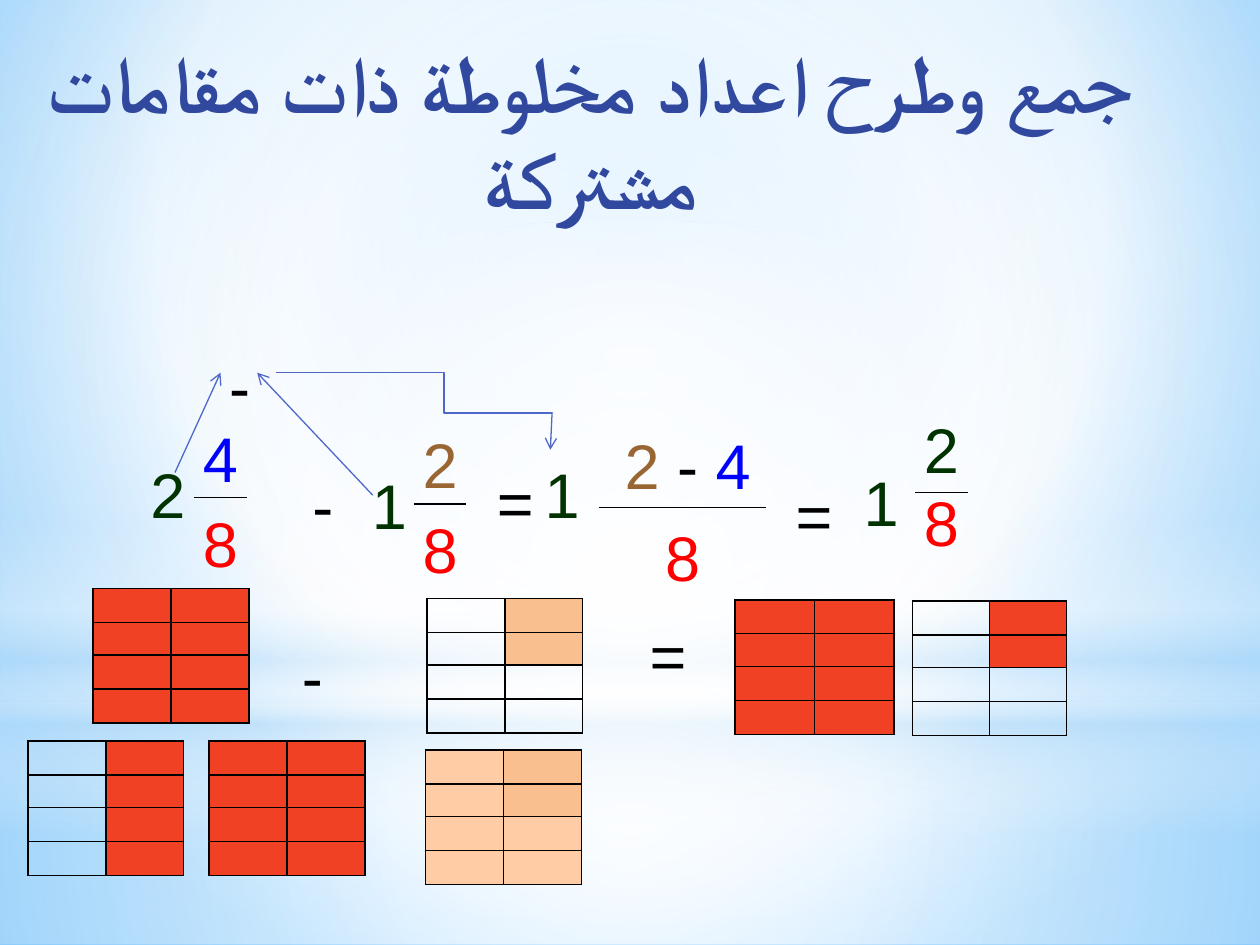
from dataclasses import dataclass
from lxml.etree import SubElement
from pptx import Presentation
from pptx.dml.color import RGBColor
from pptx.enum.shapes import MSO_CONNECTOR as Connector, MSO_SHAPE as Shape
from pptx.enum.text import MSO_ANCHOR as Anchor, MSO_AUTO_SIZE as AutoSize, PP_ALIGN as Align
from pptx.oxml import parse_xml
from pptx.oxml.ns import nsdecls, qn
from pptx.util import Pt


@dataclass(frozen=True)
class Theme:
    title_font: str = "Karla"
    font: str = "Arial"
    title_size: float = 46
    number_size: float = 36
    cell_size: float = 8
    title: str = "31489F"
    black: str = "000000"
    whole: str = "003300"
    first: str = "0000FF"
    second: str = "996633"
    bottom: str = "FF0000"
    arrow: str = "4E67C8"
    red: str = "F14124"
    orange: str = "FABF8F"
    peach: str = "FFCCA6"


THEME = Theme()
TITLE = "جمع وطرح اعداد مخلوطة ذات مقامات مشتركة"

# Gradients: stops (position, colour, opacity), then centre insets or None for vertical
BACKGROUND = ([(0, "9ED5FF", 100), (60, "FFFFFF", 100), (100, "5BB9FF", 100)], (20, 10, 20, 60))
CENTRE = (50, 50, 50, 50)
# Backdrop: shape, top, height, stops, centre
BACKDROP = [
    (Shape.RECTANGLE, 402, 138, [(0, "FFFFFF", 91), (37, "FFFFFF", 76), (100, "B4DCFA", 79)], CENTRE),
    (Shape.RECTANGLE, 0, 402, [(0, "FFFFFF", 89), (48, "FFFFFF", 62), (100, "B4DCFA", 79)], CENTRE),
    (Shape.RECTANGLE, 296.5, 180, [(0, "FFFFFF", 0), (29, "FFFFFF", 30), (45, "B4DCFA", 40),
                                   (55, "FFFFFF", 26), (65, "B4DCFA", 60), (100, "FFFFFF", 0)], None),
    (Shape.OVAL, 126, 402, [(0, "FFFFFF", 100), (56, "FFFFFF", 0)], CENTRE),
]

# Fractions: left, numerator top, bar y, denominator top, numerator, colour, denominator
FRACTIONS = [
    (105, 236, 284.5, 284.5, "4", THEME.first, "8"),
    (230.5, 239.75, 288, 288, "2", THEME.second, "8"),
    (517, 231, 281.5, 273, "2", THEME.whole, "8"),
]
DIFFERENCE = [("2 ", THEME.second), ("- ", THEME.black), ("4", THEME.first)]

# Whole numbers and signs: text, left, top
WHOLES = [("2", 75, 257), ("1", 201.5, 263), ("1", 300.25, 257), ("1", 482.5, 261.5)]
SIGNS = [("-", 163.5, 263), ("=", 273.5, 261.5), ("=", 444.25, 268.5),
         ("-", 157.5, 360.75), ("=", 360.75, 349), ("-", 116, 195)]

# Straight arrows: start, end
ARROWS = [((100, 270), (126, 213)), ((213, 283), (147, 213)), ((315.5, 235.5), (314.5, 257))]

# Fraction models: left, top, column width, rows of cell colours
ROW_HEIGHTS = [19.4, 18.7, 19.4, 19.4]
FULL = [(THEME.red, THEME.red)] * 4
EMPTY = (None, None)
MODELS = [
    (16, 423.5, 44.5, [(None, THEME.red)] * 4),
    (244, 342, 44.5, [(None, THEME.orange)] * 2 + [EMPTY] * 2),
    (521.5, 343.5, 44, [(None, THEME.red)] * 2 + [EMPTY] * 2),
    (53.25, 336.25, 44.5, FULL),
    (243.25, 428.5, 44.5, [(THEME.peach, THEME.orange)] * 2 + [(THEME.peach, THEME.peach)] * 2),
    (420, 342.75, 45.4, FULL),
    (119.5, 423.5, 44.5, FULL),
]


def set_gradient(fill, properties, stops, centre):
    fill.gradient()
    stop_xml = "".join(
        f'<a:gs pos="{position * 1000}"><a:srgbClr val="{color}">'
        f'<a:alpha val="{opacity * 1000}"/></a:srgbClr></a:gs>'
        for position, color, opacity in stops)
    direction = '<a:lin ang="5400000" scaled="0"/>'
    if centre:
        sides = " ".join(f'{side}="{inset * 1000}"' for side, inset in zip("ltrb", centre))
        direction = f'<a:path path="circle"><a:fillToRect {sides}/></a:path>'
    gradient = parse_xml(f'<a:gradFill {nsdecls("a")} rotWithShape="1">'
                         f'<a:gsLst>{stop_xml}</a:gsLst>{direction}</a:gradFill>')
    properties.replace(properties.find(qn("a:gradFill")), gradient)


def format_run(run, font, size, color):
    run.font.name = font
    run.font.size = Pt(size)
    run.font.color.rgb = RGBColor.from_string(color)


def add_text(slide, runs, left, top, width=42):
    shape = slide.shapes.add_textbox(Pt(left), Pt(top), Pt(width), Pt(50.5))
    frame = shape.text_frame
    frame.word_wrap = True
    frame.auto_size = AutoSize.SHAPE_TO_FIT_TEXT
    paragraph = frame.paragraphs[0]
    paragraph.alignment = Align.CENTER
    spacing = SubElement(paragraph._p.get_or_add_pPr(), qn("a:spcBef"))
    SubElement(spacing, qn("a:spcPct")).set("val", "50000")
    for text, color in runs:
        run = paragraph.add_run()
        run.text = text
        format_run(run, THEME.font, THEME.number_size, color)


def add_line(slide, start, end, color, kind=Connector.STRAIGHT, arrow=False):
    line = slide.shapes.add_connector(kind, *(Pt(value) for value in (*start, *end)))
    line.line.color.rgb = RGBColor.from_string(color)
    line.line.width = Pt(0.75)
    properties = line._element.spPr
    if arrow:
        SubElement(properties.find(qn("a:ln")), qn("a:tailEnd")).set("type", "arrow")
    SubElement(properties, qn("a:effectLst"))
    return line


def add_model(slide, left, top, column_width, rows):
    frame = slide.shapes.add_table(len(rows), 2, Pt(left), Pt(top),
                                   Pt(2 * column_width), Pt(sum(ROW_HEIGHTS)))
    table = frame.table
    table.first_row = table.horz_banding = False
    for column in table.columns:
        column.width = Pt(column_width)
    for row, height, colors in zip(table.rows, ROW_HEIGHTS, rows):
        row.height = Pt(height)
        for cell, color in zip(row.cells, colors):
            format_cell(cell, color)


def format_cell(cell, color):
    cell.margin_left = cell.margin_right = cell.margin_top = cell.margin_bottom = 0
    end = cell.text_frame.paragraphs[0]._p.get_or_add_endParaRPr()
    end.set("sz", str(THEME.cell_size * 100))
    properties = cell._tc.get_or_add_tcPr()
    for side in ("lnL", "lnR", "lnT", "lnB"):
        border = SubElement(properties, qn(f"a:{side}"), w=str(Pt(1)))
        SubElement(SubElement(border, qn("a:solidFill")), qn("a:srgbClr")).set("val", THEME.black)
    if color:
        cell.fill.solid()
        cell.fill.fore_color.rgb = RGBColor.from_string(color)
    else:
        cell.fill.background()


def add_title(slide):
    title = slide.shapes.title
    title.left, title.top, title.width, title.height = Pt(14.5), Pt(15), Pt(646), Pt(90)
    frame = title.text_frame
    frame.text = TITLE
    frame.word_wrap = True
    frame.auto_size = AutoSize.NONE
    frame.vertical_anchor = Anchor.TOP
    paragraph = frame.paragraphs[0]
    paragraph.alignment = Align.CENTER
    paragraph._p.get_or_add_pPr().set("rtl", "1")
    run = paragraph.runs[0]
    format_run(run, THEME.title_font, THEME.title_size, THEME.title)
    run.font.bold = True
    SubElement(run._r.get_or_add_rPr(), qn("a:cs")).set("typeface", THEME.title_font)
    slide.shapes._spTree.append(title._element)  # in front of the backdrop


def main():
    presentation = Presentation()
    presentation.slide_width, presentation.slide_height = Pt(720), Pt(540)
    slide = presentation.slides.add_slide(presentation.slide_layouts[5])

    # Background and backdrop
    fill = slide.background.fill
    set_gradient(fill, slide._element.cSld.bg.bgPr, *BACKGROUND)
    for kind, top, height, stops, centre in BACKDROP:
        shape = slide.shapes.add_shape(kind, 0, Pt(top), Pt(720), Pt(height))
        shape.shadow.inherit = False
        shape.line.fill.background()
        set_gradient(shape.fill, shape._element.spPr, stops, centre)
    add_title(slide)

    # Equation
    for left, top, bar, bottom, numerator, color, denominator in FRACTIONS:
        add_text(slide, [(numerator, color)], left, top)
        add_line(slide, (left + 6, bar), (left + 36, bar), THEME.black)
        add_text(slide, [(denominator, THEME.bottom)], left, bottom)
    add_text(slide, DIFFERENCE, 342, 240, 102)
    add_line(slide, (342, 290), (438, 290), THEME.black)
    add_text(slide, [("8", THEME.bottom)], 342, 293, 96)
    for items, color in ((WHOLES, THEME.whole), (SIGNS, THEME.black)):
        for text, left, top in items:
            add_text(slide, [(text, color)], left, top)

    # Fraction models
    for model in MODELS:
        add_model(slide, *model)

    # Arrows from the whole numbers to their difference
    for start, end in ARROWS:
        add_line(slide, start, end, THEME.arrow, arrow=True)
    elbow = add_line(slide, (157.5, 213), (315.5, 236), THEME.arrow, Connector.ELBOW)
    adjustments = elbow._element.spPr.find(qn("a:prstGeom")).get_or_add_avLst()
    SubElement(adjustments, qn("a:gd"), name="adj1", fmla="val 60900")

    presentation.save("out.pptx")


if __name__ == "__main__":
    main()
